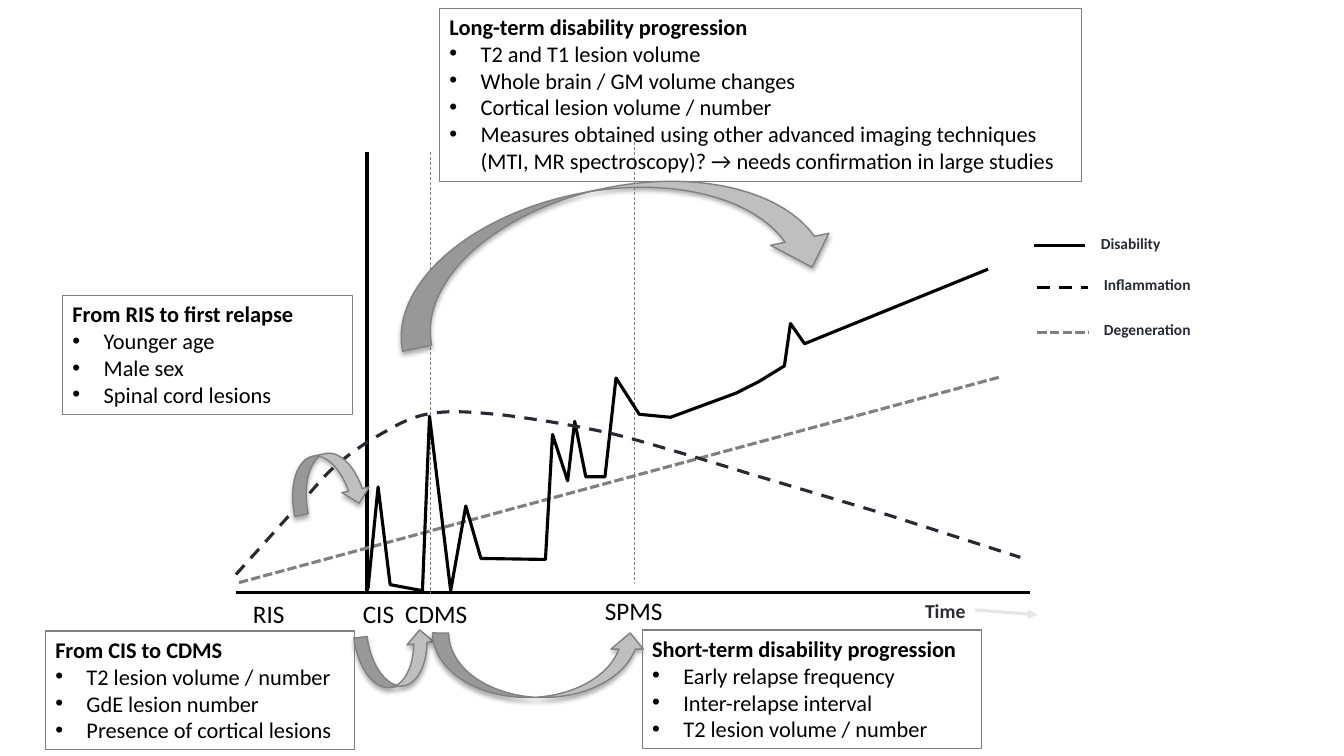
from dataclasses import dataclass
from typing import Optional

from lxml import etree
from pptx import Presentation
from pptx.dml.color import RGBColor
from pptx.enum.dml import MSO_LINE
from pptx.enum.shapes import MSO_CONNECTOR, MSO_SHAPE
from pptx.enum.text import MSO_ANCHOR, MSO_AUTO_SIZE, PP_ALIGN
from pptx.oxml import parse_xml
from pptx.oxml.ns import nsdecls, qn
from pptx.util import Inches, Pt

STRAIGHT = MSO_CONNECTOR.STRAIGHT
RECTANGLE, CURVED_ARROW = MSO_SHAPE.RECTANGLE, MSO_SHAPE.CURVED_DOWN_ARROW
DASH, SHORT_DASH = MSO_LINE.DASH, MSO_LINE.SQUARE_DOT
LEFT, CENTER = PP_ALIGN.LEFT, PP_ALIGN.CENTER
TOP, MIDDLE = MSO_ANCHOR.TOP, MSO_ANCHOR.MIDDLE
GROW = MSO_AUTO_SIZE.SHAPE_TO_FIT_TEXT

BLACK = RGBColor(0x00, 0x00, 0x00)
INK = RGBColor(0x29, 0x29, 0x34)
GRAY = RGBColor(0x80, 0x80, 0x80)
SILVER = RGBColor(0xBF, 0xBF, 0xBF)
PALE = RGBColor(0xE7, 0xE6, 0xE6)
FONT = "Calibri"

# The grid has one-inch columns and rows
CELL = Inches(1)
COLUMNS, ROWS = 13.33, 7.5
INDENT = 0.31
CURVE_STEPS = 12
Point = tuple[float, float]


@dataclass
class Stroke:
    color: RGBColor
    width: float = 2.25
    dash: Optional[MSO_LINE] = None


@dataclass
class Segment:
    start: Point
    end: Point
    stroke: Stroke
    arrowhead: bool = False


@dataclass
class Label:
    text: str
    left: float
    top: float
    width: float
    height: float = 0.4
    size: int = 18
    color: RGBColor = BLACK
    bold: bool = False
    alignment: PP_ALIGN = LEFT


@dataclass
class Arrow:
    left: float
    top: float
    width: float
    height: float
    rotation: float = 0
    flipped: bool = False


@dataclass
class Panel:
    heading: str
    items: list[str]
    left: float
    top: float
    width: float
    height: float = 1.18


DISABILITY = Stroke(BLACK)
INFLAMMATION = Stroke(INK, dash=DASH)
DEGENERATION = Stroke(GRAY, dash=SHORT_DASH)
GUIDE = Stroke(GRAY, 0.5, DASH)

SEGMENTS = [
    Segment((2.34, 5.88), (10.22, 5.88), DISABILITY),
    Segment((3.64, 1.51), (3.64, 5.88), DISABILITY),
    Segment((2.37, 5.78), (9.92, 3.74), DEGENERATION),
    Segment((9.67, 6.05), (10.29, 6.1), Stroke(PALE), arrowhead=True),
    Segment((4.27, 1.51), (4.27, 5.89), GUIDE),
    Segment((6.29, 1.41), (6.29, 5.78), GUIDE),
]
DISABILITY_COURSE = [
    (3.65, 5.84), (3.75, 4.83), (3.87, 5.8), (4.19, 5.86), (4.26, 4.13), (4.47, 5.86),
    (4.62, 5.02), (4.77, 5.54), (5.41, 5.55), (5.48, 4.31), (5.63, 4.77), (5.7, 4.18),
    (5.81, 4.73), (6, 4.73), (6.11, 3.75), (6.34, 4.11), (6.65, 4.14), (7.3, 3.9),
    (7.52, 3.79), (7.78, 3.63), (7.84, 3.21), (7.98, 3.41), (9.8, 2.67),
]
# Each entry holds two control points and an end point
INFLAMMATION_CURVES = [
    ((3.06, 4.92), (3.18, 4.75), (3.33, 4.62)),
    ((3.48, 4.49), (3.63, 4.39), (3.79, 4.3)),
    ((3.95, 4.21), (4.08, 4.13), (4.29, 4.1)),
    ((4.49, 4.07), (4.71, 4.09), (5.01, 4.12)),
    ((5.32, 4.16), (5.71, 4.22), (6.1, 4.31)),
    ((6.5, 4.41), (7.4, 4.69), (7.4, 4.69)),
]
LEGEND = [
    ("Disability", 10.26, 2.44, 0.8, DISABILITY),
    ("Inflammation", 10.29, 2.85, 1.07, Stroke(BLACK, dash=DASH)),
    ("Degeneration", 10.29, 3.3, 1.07, DEGENERATION),
]
LABELS = [
    Label("Time", 9.07, 5.89, 0.61, 0.34, 14, INK, True, CENTER),
    Label("RIS", 2.41, 5.89, 0.52),
    Label("CIS", 3.5, 5.89, 0.52),
    Label("CDMS", 3.92, 5.89, 0.82),
    Label("SPMS", 5.9, 5.86, 0.78),
]
ARROWS = [
    Arrow(2.86, 4.5, 0.79, 0.55, 348.4),
    Arrow(3.54, 6.28, 0.79, 0.53, 352.8, True),
    Arrow(3.83, 1.87, 4.44, 1.18, 348.4),
    Arrow(4.29, 6.28, 2.12, 0.64, flipped=True),
]
PANELS = [
    Panel("From RIS to first relapse",
          ["Younger age", "Male sex", "Spinal cord lesions"], 0.62, 2.93, 2.88),
    Panel("Long-term disability progression",
          ["T2 and T1 lesion volume", "Whole brain / GM volume changes",
           "Cortical lesion volume / number",
           "Measures obtained using other advanced imaging techniques "
           "(MTI, MR spectroscopy)? → needs confirmation in large studies"],
          4.36, 0.08, 6.37, 1.72),
    Panel("Short-term disability progression",
          ["Early relapse frequency", "Inter-relapse interval",
           "T2 lesion volume / number"], 6.37, 6.25, 3.37),
    Panel("From CIS to CDMS",
          ["T2 lesion volume / number", "GdE lesion number",
           "Presence of cortical lesions"], 0.45, 6.26, 3.07),
]


def cells(*lengths: float) -> list[int]:
    return [round(length * CELL) for length in lengths]


def apply_stroke(line, stroke: Stroke) -> None:
    line.color.rgb = stroke.color
    line.width = Pt(stroke.width)
    if stroke.dash is not None:
        line.dash_style = stroke.dash


def format_paragraph(paragraph, size: int, color: RGBColor, bold: bool) -> None:
    for run in paragraph.runs:
        run.font.name, run.font.size = FONT, Pt(size)
        run.font.color.rgb, run.font.bold = color, bold


def add_segment(slide, segment: Segment) -> None:
    connector = slide.shapes.add_connector(STRAIGHT, *cells(*segment.start, *segment.end))
    apply_stroke(connector.line, segment.stroke)
    properties = connector._element.spPr
    if segment.arrowhead:
        etree.SubElement(properties.find(qn("a:ln")), qn("a:tailEnd"), type="triangle")
    etree.SubElement(properties, qn("a:effectLst"))


def add_course(slide, points: list[Point], stroke: Stroke) -> None:
    corners = [cells(*point) for point in points]
    builder = slide.shapes.build_freeform(*corners[0])
    builder.add_line_segments(corners[1:], close=False)
    shape = builder.convert_to_shape()
    shape.shadow.inherit = False
    shape.fill.background()
    apply_stroke(shape.line, stroke)


def bezier(start: Point, first: Point, second: Point, end: Point) -> list[Point]:
    points = []
    for step in range(1, CURVE_STEPS + 1):
        t = step / CURVE_STEPS
        weights = ((1 - t) ** 3, 3 * t * (1 - t) ** 2, 3 * t ** 2 * (1 - t), t ** 3)
        corners = list(zip(weights, (start, first, second, end)))
        points.append((sum(w * p[0] for w, p in corners), sum(w * p[1] for w, p in corners)))
    return points


def inflammation_course() -> list[Point]:
    points = [(2.34, 5.7), (2.89, 5.09)]
    for curve in INFLAMMATION_CURVES:
        points += bezier(points[-1], *curve)
    return points + [(8.81, 5.11), (10.12, 5.53)]


def add_label(slide, label: Label) -> None:
    box = slide.shapes.add_textbox(*cells(label.left, label.top, label.width, label.height))
    text_frame = box.text_frame
    text_frame.word_wrap, text_frame.auto_size = False, GROW
    text_frame.text = label.text
    paragraph = text_frame.paragraphs[0]
    paragraph.alignment = label.alignment
    format_paragraph(paragraph, label.size, label.color, label.bold)


def add_arrow(slide, arrow: Arrow) -> None:
    shape = slide.shapes.add_shape(
        CURVED_ARROW, *cells(arrow.left, arrow.top, arrow.width, arrow.height))
    shape.rotation = arrow.rotation
    shape.fill.solid()
    shape.fill.fore_color.rgb = SILVER
    apply_stroke(shape.line, Stroke(GRAY, 1))
    properties = shape._element.spPr
    if arrow.flipped:
        properties.find(qn("a:xfrm")).set("flipV", "1")
    properties.append(parse_xml(
        f'<a:effectLst {nsdecls("a")}><a:outerShdw blurRad="{Pt(3.5)}" dist="{Pt(2.2)}" '
        'dir="5400000" rotWithShape="0"><a:srgbClr val="000000"><a:alpha val="32000"/>'
        '</a:srgbClr></a:outerShdw></a:effectLst>'))


def add_panel(slide, panel: Panel) -> None:
    shape = slide.shapes.add_shape(
        RECTANGLE, *cells(panel.left, panel.top, panel.width, panel.height))
    shape.shadow.inherit = False
    shape.fill.background()
    apply_stroke(shape.line, Stroke(GRAY, 0.75))
    text_frame = shape.text_frame
    text_frame.word_wrap, text_frame.auto_size = True, GROW
    text_frame.vertical_anchor = TOP
    text_frame.text = "\n".join([panel.heading, *panel.items])
    for index, paragraph in enumerate(text_frame.paragraphs):
        paragraph.alignment = LEFT
        format_paragraph(paragraph, 16, BLACK, index == 0)
        if index:
            properties = paragraph._p.get_or_add_pPr()
            properties.set("marL", str(Inches(INDENT)))
            properties.set("indent", str(-Inches(INDENT)))
            etree.SubElement(properties, qn("a:buFont"), typeface="Arial")
            etree.SubElement(properties, qn("a:buChar"), char="•")


def main() -> None:
    presentation = Presentation()
    presentation.slide_width, presentation.slide_height = cells(COLUMNS, ROWS)
    slide = presentation.slides.add_slide(presentation.slide_layouts[6])

    # Axes, guides and disease courses
    for segment in SEGMENTS:
        add_segment(slide, segment)
    add_course(slide, DISABILITY_COURSE, DISABILITY)
    add_course(slide, inflammation_course(), INFLAMMATION)

    # Legend
    for text, left, middle, width, stroke in LEGEND:
        add_segment(slide, Segment((left, middle), (left + 0.5, middle), stroke))
        add_label(slide, Label(text, left + 0.56, middle - 0.17, width, 0.29, 11, INK, True))

    # Stage arrows, stage names and explanatory panels
    for arrow in ARROWS:
        add_arrow(slide, arrow)
    for label in LABELS:
        add_label(slide, label)
    for panel in PANELS:
        add_panel(slide, panel)

    presentation.save("out.pptx")


if __name__ == "__main__":
    main()
